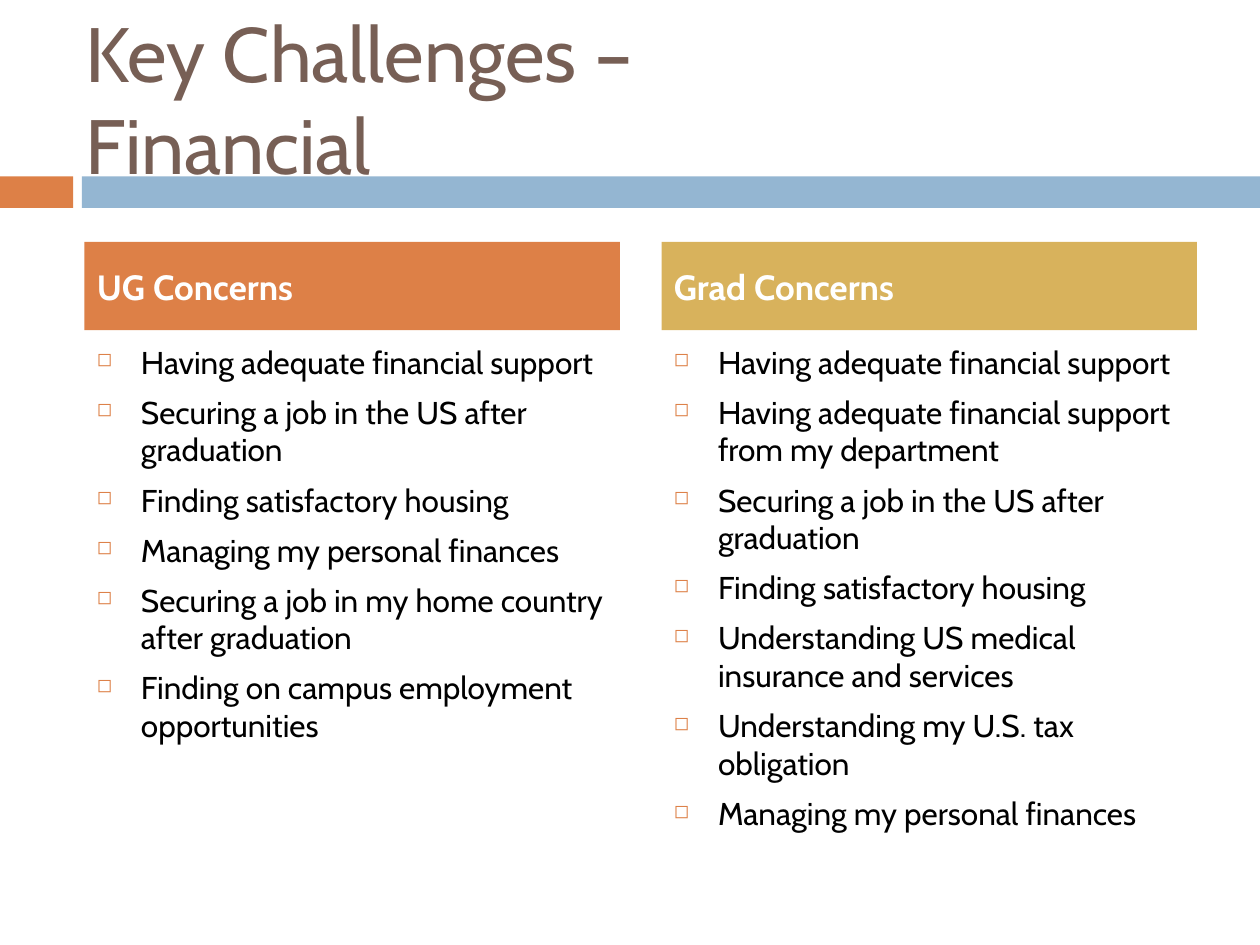
"""Build the slide on key financial challenges of UG and Grad students."""
from lxml import etree
from pptx import Presentation
from pptx.dml.color import RGBColor
from pptx.enum import shapes, text
from pptx.oxml import ns
from pptx.util import Inches, Pt

ORANGE = RGBColor(0xDD, 0x80, 0x47)
BLUE = RGBColor(0x94, 0xB6, 0xD2)
GOLD = RGBColor(0xD8, 0xB2, 0x5C)
BROWN = RGBColor(0x77, 0x5F, 0x55)
BLACK = RGBColor(0, 0, 0)
WHITE = RGBColor(0xFF, 0xFF, 0xFF)

COLUMN_WIDTH = Inches(4.25)
INDENT = Inches(0.35)

CONCERNS = [
    ("UG Concerns", Inches(0.67), ORANGE, [
        "Having adequate financial support",
        "Securing a job in the US after graduation",
        "Finding satisfactory housing",
        "Managing my personal finances",
        "Securing a job in my home country after graduation",
        "Finding on campus employment opportunities",
    ]),
    ("Grad Concerns", Inches(5.25), GOLD, [
        "Having adequate financial support",
        "Having adequate financial support from my department",
        "Securing a job in the US after graduation",
        "Finding satisfactory housing",
        "Understanding US medical insurance and services",
        "Understanding my U.S. tax obligation",
        "Managing my personal finances",
    ]),
]


def add_band(left, top, width, height, color):
    band = slide.shapes.add_shape(shapes.MSO_SHAPE.RECTANGLE, left, top, width, height)
    band.shadow.inherit = False
    band.fill.solid()
    band.fill.fore_color.rgb = color
    band.line.fill.background()
    return band


def add_run(paragraph, words, size, color, bold=False):
    paragraph.alignment = text.PP_ALIGN.LEFT
    run = paragraph.add_run()
    run.text = words
    run.font.name = "Cabin"
    run.font.size = Pt(size)
    run.font.bold = bold
    run.font.color.rgb = color


prs = Presentation()
prs.slide_width = Inches(10)
prs.slide_height = Inches(7.5)
slide = prs.slides.add_slide(prs.slide_layouts[6])

add_band(0, Inches(1.4), Inches(0.58), Inches(0.25), ORANGE)
add_band(Inches(0.65), Inches(1.4), Inches(9.35), Inches(0.25), BLUE)

title = slide.shapes.add_textbox(Inches(0.58), Inches(0.3), Inches(8.92), Inches(0.95)).text_frame
title.word_wrap = True
title.vertical_anchor = text.MSO_ANCHOR.MIDDLE
heading = title.paragraphs[0]
add_run(heading, "Key Challenges –", 44, BROWN)
heading.add_line_break()
add_run(heading, "Financial", 44, BROWN)

for group, left, color, concerns in CONCERNS:
    header = add_band(left, Inches(1.92), COLUMN_WIDTH, Inches(0.7), color).text_frame
    header.word_wrap = True
    header.vertical_anchor = text.MSO_ANCHOR.MIDDLE
    add_run(header.paragraphs[0], group, 20, WHITE, bold=True)

    listing = slide.shapes.add_textbox(left, Inches(2.67), COLUMN_WIDTH, Inches(3.92)).text_frame
    listing.word_wrap = True
    for index, concern in enumerate(concerns):
        item = listing.add_paragraph() if index else listing.paragraphs[0]
        properties = item._p.get_or_add_pPr()
        properties.set("marL", str(INDENT))
        properties.set("indent", str(-INDENT))
        bullet_color = etree.SubElement(properties, ns.qn("a:buClr"))
        etree.SubElement(bullet_color, ns.qn("a:srgbClr"), val=str(ORANGE))
        etree.SubElement(properties, ns.qn("a:buSzPct"), val="60000")
        etree.SubElement(properties, ns.qn("a:buChar"), char="◻")
        if index:
            item.space_before = Pt(7)
        add_run(item, concern, 18, BLACK)

prs.save("out.pptx")
